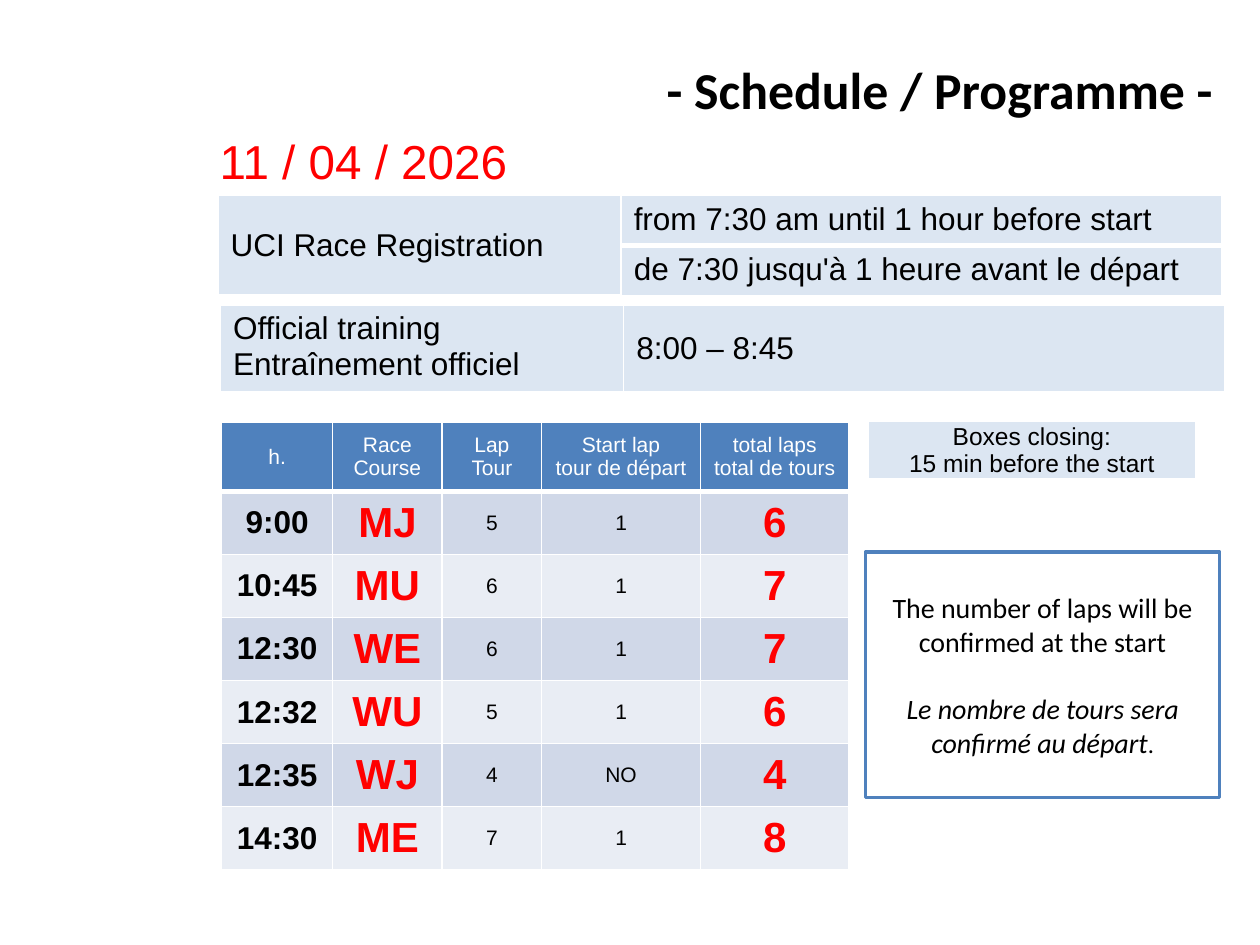
"""Build the race-day schedule slide."""
import dataclasses
from typing import Sequence

import lxml.etree
import pptx
import pptx.dml.color
import pptx.enum.shapes
import pptx.enum.text
import pptx.oxml.ns
import pptx.util

Inches = pptx.util.Inches
Pt = pptx.util.Pt
ALIGN = pptx.enum.text.PP_ALIGN
ANCHOR = pptx.enum.text.MSO_ANCHOR


@dataclasses.dataclass(frozen=True)
class Theme:
    sans: str = "Arial"
    display: str = "Calibri"
    black: str = "000000"
    white: str = "FFFFFF"
    red: str = "FF0000"
    blue: str = "4F81BD"
    pale: str = "DCE6F2"
    bands: tuple = ("D0D8E8", "E9EDF4")
    title: float = 29.6
    date: float = 27.2
    code: float = 24
    body: float = 18
    note: float = 16
    small: float = 14
    detail: float = 12


THEME = Theme()


@dataclasses.dataclass(frozen=True)
class TextStyle:
    size: float
    color: str = THEME.black
    font: str = THEME.sans
    bold: bool = False
    italic: bool = False
    align: ALIGN = ALIGN.CENTER


@dataclasses.dataclass(frozen=True)
class CellStyle:
    text: TextStyle
    fill: str
    bottom: float = 3
    anchor: ANCHOR = ANCHOR.MIDDLE


@dataclasses.dataclass(frozen=True)
class Grid:
    left: float
    top: float
    columns: Sequence[float]
    rows: Sequence[float]


TITLE = TextStyle(THEME.title, font=THEME.display, bold=True, align=ALIGN.RIGHT)
DATE = TextStyle(THEME.date, THEME.red)
NOTE = TextStyle(THEME.note, font=THEME.display)
NOTE_FRENCH = dataclasses.replace(NOTE, italic=True)
INFO = CellStyle(TextStyle(THEME.body, align=ALIGN.LEFT), THEME.pale)
INFO_TOP = dataclasses.replace(INFO, anchor=ANCHOR.TOP)
INFO_LAST = dataclasses.replace(INFO_TOP, bottom=1)
CLOSING = CellStyle(TextStyle(THEME.small), THEME.pale)
HEADER = CellStyle(TextStyle(THEME.detail, THEME.white), THEME.blue)
TIME_TEXT = TextStyle(THEME.body, bold=True)
CODE_TEXT = TextStyle(THEME.code, THEME.red, bold=True)
DETAIL_TEXT = TextStyle(THEME.detail)
RACE_TEXT = (TIME_TEXT, CODE_TEXT, DETAIL_TEXT, DETAIL_TEXT, CODE_TEXT)

HEADINGS = ("h.", "Race Course", "Lap Tour", "Start lap\vtour de départ",
            "total laps\ntotal de tours")
RACES = (
    ("9:00", "MJ", "5", "1", "6"),
    ("10:45", "MU", "6", "1", "7"),
    ("12:30", "WE", "6", "1", "7"),
    ("12:32", "WU", "5", "1", "6"),
    ("12:35", "WJ", "4", "NO", "4"),
    ("14:30", "ME", "7", "1", "8"),
)


def rgb(value: str) -> pptx.dml.color.RGBColor:
    """Turn a hex string into a colour."""
    return pptx.dml.color.RGBColor.from_string(value)


def style_paragraph(para, style: TextStyle) -> None:
    """Apply a text style to a whole paragraph."""
    para.alignment = style.align
    font = para.font
    font.size, font.name = Pt(style.size), style.font
    font.bold, font.italic = style.bold, style.italic
    font.color.rgb = rgb(style.color)
    for span in para.runs:
        span.font.size, span.font.name = Pt(style.size), style.font
        span.font.bold, span.font.italic = style.bold, style.italic
        span.font.color.rgb = rgb(style.color)


def add_text(slide, left: float, top: float, width: float, height: float,
             text: str, style: TextStyle) -> None:
    """Add a one-paragraph text box."""
    box = slide.shapes.add_textbox(*map(Inches, (left, top, width, height)))
    box.text_frame.word_wrap = True
    para = box.text_frame.paragraphs[0]
    para.text = text
    style_paragraph(para, style)


def add_border(cell, side: str, width: float) -> None:
    """Draw one white cell edge."""
    qn = pptx.oxml.ns.qn
    properties = cell._tc.get_or_add_tcPr()
    edge = lxml.etree.SubElement(properties, qn(f"a:ln{side}"), w=str(int(Pt(width))))
    fill = lxml.etree.SubElement(edge, qn("a:solidFill"))
    lxml.etree.SubElement(fill, qn("a:srgbClr"), val=THEME.white)


def fill_cell(cell, text: str, style: CellStyle) -> None:
    """Write and format one table cell."""
    for side, width in zip("LRTB", (1, 1, 1, style.bottom)):
        add_border(cell, side, width)
    cell.fill.solid()
    cell.fill.fore_color.rgb = rgb(style.fill)
    cell.vertical_anchor = style.anchor
    cell.text = text
    for para in cell.text_frame.paragraphs:
        style_paragraph(para, style.text)


def add_grid(slide, grid: Grid):
    """Add an unbanded table with the given columns and rows."""
    frame = slide.shapes.add_table(
        len(grid.rows), len(grid.columns), Inches(grid.left), Inches(grid.top),
        Inches(sum(grid.columns)), Inches(sum(grid.rows)))
    table = frame.table
    table.first_row = table.horz_banding = False
    for column, width in zip(table.columns, grid.columns):
        column.width = Inches(width)
    for row, height in zip(table.rows, grid.rows):
        row.height = Inches(height)
    return table


def add_note(slide) -> None:
    """Add the framed bilingual note about lap numbers."""
    box = slide.shapes.add_shape(
        pptx.enum.shapes.MSO_SHAPE.RECTANGLE, *map(Inches, (6.87, 4.38, 2.81, 1.95)))
    box.shadow.inherit = False
    box.fill.solid()
    box.fill.fore_color.rgb = rgb(THEME.white)
    box.line.color.rgb = rgb(THEME.blue)
    box.line.width = Pt(2)
    frame = box.text_frame
    frame.word_wrap = True
    frame.vertical_anchor = ANCHOR.MIDDLE
    english, french = frame.paragraphs[0], frame.add_paragraph()
    english.text = "The number of laps will be confirmed at the start"
    french.text = "Le nombre de tours sera confirmé au départ"
    style_paragraph(english, NOTE)
    style_paragraph(french, NOTE_FRENCH)
    french.space_before = Pt(19.5)
    stop = french.add_run()
    stop.text = "."
    stop.font.size, stop.font.name, stop.font.italic = Pt(THEME.small), THEME.display, False
    stop.font.color.rgb = rgb(THEME.black)


def add_information(slide) -> None:
    """Add the registration, training and closing tables."""
    columns = (3.2, 4.77)
    registration = add_grid(slide, Grid(1.73, 1.55, columns, (0.4, 0.4)))
    registration.cell(0, 0).merge(registration.cell(1, 0))
    fill_cell(registration.cell(0, 0), "UCI Race Registration", INFO)
    fill_cell(registration.cell(0, 1), "from 7:30 am until 1 hour before start", INFO_TOP)
    fill_cell(registration.cell(1, 1), "de 7:30 jusqu'à 1 heure avant le départ", INFO_LAST)
    training = add_grid(slide, Grid(1.75, 2.42, columns, (0.7,)))
    fill_cell(training.cell(0, 0), "Official training\vEntraînement officiel", INFO_TOP)
    fill_cell(training.cell(0, 1), "8:00 – 8:45", INFO)
    closing = add_grid(slide, Grid(6.89, 3.34, (2.6,), (0.47,))).cell(0, 0)
    closing.margin_left = closing.margin_right = Inches(0.07)
    closing.margin_top = closing.margin_bottom = 0
    fill_cell(closing, "Boxes closing:\n15 min before the start", CLOSING)


def add_races(slide) -> None:
    """Add the table of races and laps."""
    heights = (0.55,) + (0.5,) * len(RACES)
    table = add_grid(slide, Grid(1.76, 3.35, (0.88, 0.87, 0.79, 1.26, 1.18), heights))
    table.first_row = True
    for column, heading in enumerate(HEADINGS):
        fill_cell(table.cell(0, column), heading, HEADER)
    for row, race in enumerate(RACES):
        band = THEME.bands[row % len(THEME.bands)]
        for column, (text, style) in enumerate(zip(race, RACE_TEXT)):
            fill_cell(table.cell(row + 1, column), text, CellStyle(style, band, bottom=1))


def main() -> None:
    """Build and save the deck."""
    deck = pptx.Presentation()
    deck.slide_width, deck.slide_height = Inches(10), Inches(7.5)
    slide = deck.slides.add_slide(deck.slide_layouts[6])
    add_text(slide, 1.25, 0.41, 8.48, 0.55, "- Schedule / Programme -", TITLE)
    add_note(slide)
    add_text(slide, 1.54, 1, 2.69, 0.55, "11 / 04 / 2026", DATE)
    add_information(slide)
    add_races(slide)
    deck.save("out.pptx")


if __name__ == "__main__":
    main()
